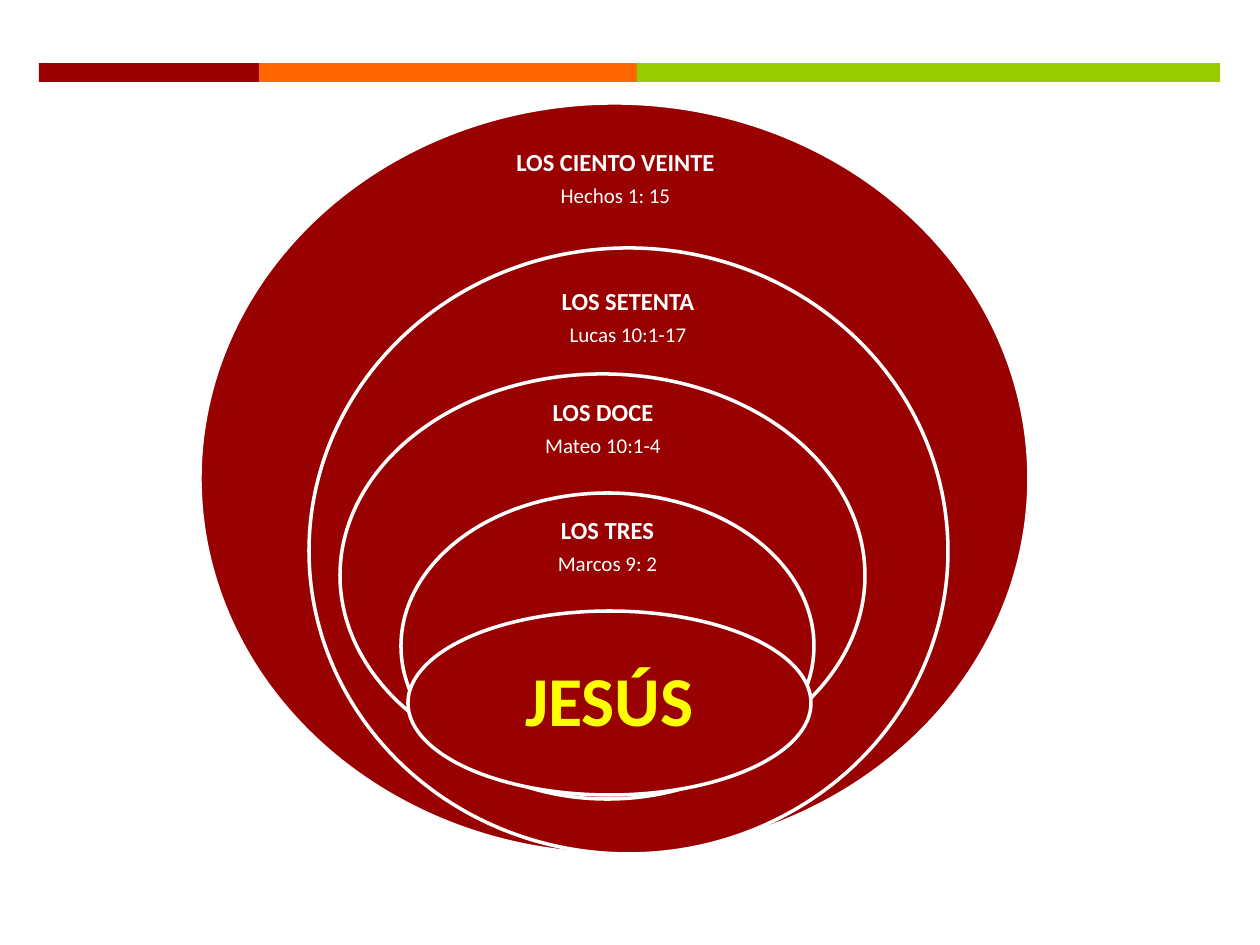
from pptx import Presentation
from pptx.dml.color import RGBColor
from pptx.enum.shapes import MSO_SHAPE as SHAPE
from pptx.enum.text import MSO_ANCHOR as ANCHOR, PP_ALIGN as ALIGN
from pptx.util import Emu, Pt

RED = RGBColor(0x99, 0x00, 0x00)
ORANGE = RGBColor(0xFF, 0x66, 0x00)
GREEN = RGBColor(0x99, 0xCC, 0x00)
WHITE = RGBColor(0xFF, 0xFF, 0xFF)
YELLOW = RGBColor(0xFF, 0xFF, 0x00)
FONT = "Calibri"

# Top band: width and colour of each segment
BAND = [(220, RED), (378, ORANGE), (583, GREEN)]

# Circles from outermost to innermost: ellipse box, text box, group, verse
CIRCLES = [
    ((200, 103, 829, 751), (460, 141, 311, 76), "LOS CIENTO VEINTE", "Hechos 1: 15"),
    ((309, 248, 639, 606), (490, 284, 276, 69), "LOS SETENTA", "Lucas 10:1-17"),
    ((340, 374, 525, 403), (467, 402, 272, 55), "LOS DOCE", "Mateo 10:1-4"),
    ((401, 493, 413, 306), (496, 520, 223, 55), "LOS TRES", "Marcos 9: 2"),
]
CENTRE = (408, 611, 403, 184)
CENTRE_TEXT = (467, 658, 285, 92)


def px(n):
    return Emu(round(n * 914400 / 126))


def add_shape(slide, kind, box, fill, line=None):
    sp = slide.shapes.add_shape(kind, *map(px, box))
    sp.shadow.inherit = False
    sp.fill.solid()
    sp.fill.fore_color.rgb = fill
    if line is None:
        sp.line.fill.background()
    else:
        sp.line.color.rgb = line
        sp.line.width = Pt(2)


def add_label(slide, box, lines, color, inset):
    """Centred text; lines holds (text, size, bold) for each paragraph."""
    tf = slide.shapes.add_textbox(*map(px, box)).text_frame
    tf.word_wrap = True
    tf.vertical_anchor = ANCHOR.MIDDLE
    tf.margin_left = tf.margin_right = px(inset)
    tf.margin_top = tf.margin_bottom = px(inset)
    for i, (text, size, bold) in enumerate(lines):
        p = tf.add_paragraph() if i else tf.paragraphs[0]
        p.alignment = ALIGN.CENTER
        p.line_spacing = 0.9
        p.space_after = Pt(size * 0.35)
        r = p.add_run()
        r.text = text
        r.font.name = FONT
        r.font.size = Pt(size)
        r.font.bold = bold
        r.font.color.rgb = color


def add_band(slide):
    left = 39
    for width, color in BAND:
        add_shape(slide, SHAPE.RECTANGLE, (left, 63, width, 19), color)
        left += width


def main():
    prs = Presentation()
    prs.slide_width, prs.slide_height = px(1260), px(945)
    slide = prs.slides.add_slide(prs.slide_layouts[6])

    add_band(slide)

    # Nested circles
    for oval, text_box, group, verse in CIRCLES:
        add_shape(slide, SHAPE.OVAL, oval, RED, WHITE)
        add_label(slide, text_box, [(group, 14, True), (verse, 12, False)], WHITE, 14)

    # Innermost circle
    add_shape(slide, SHAPE.OVAL, CENTRE, RED, WHITE)
    add_label(slide, CENTRE_TEXT, [("JESÚS", 40, True)], YELLOW, 39)

    prs.save("out.pptx")


if __name__ == "__main__":
    main()
